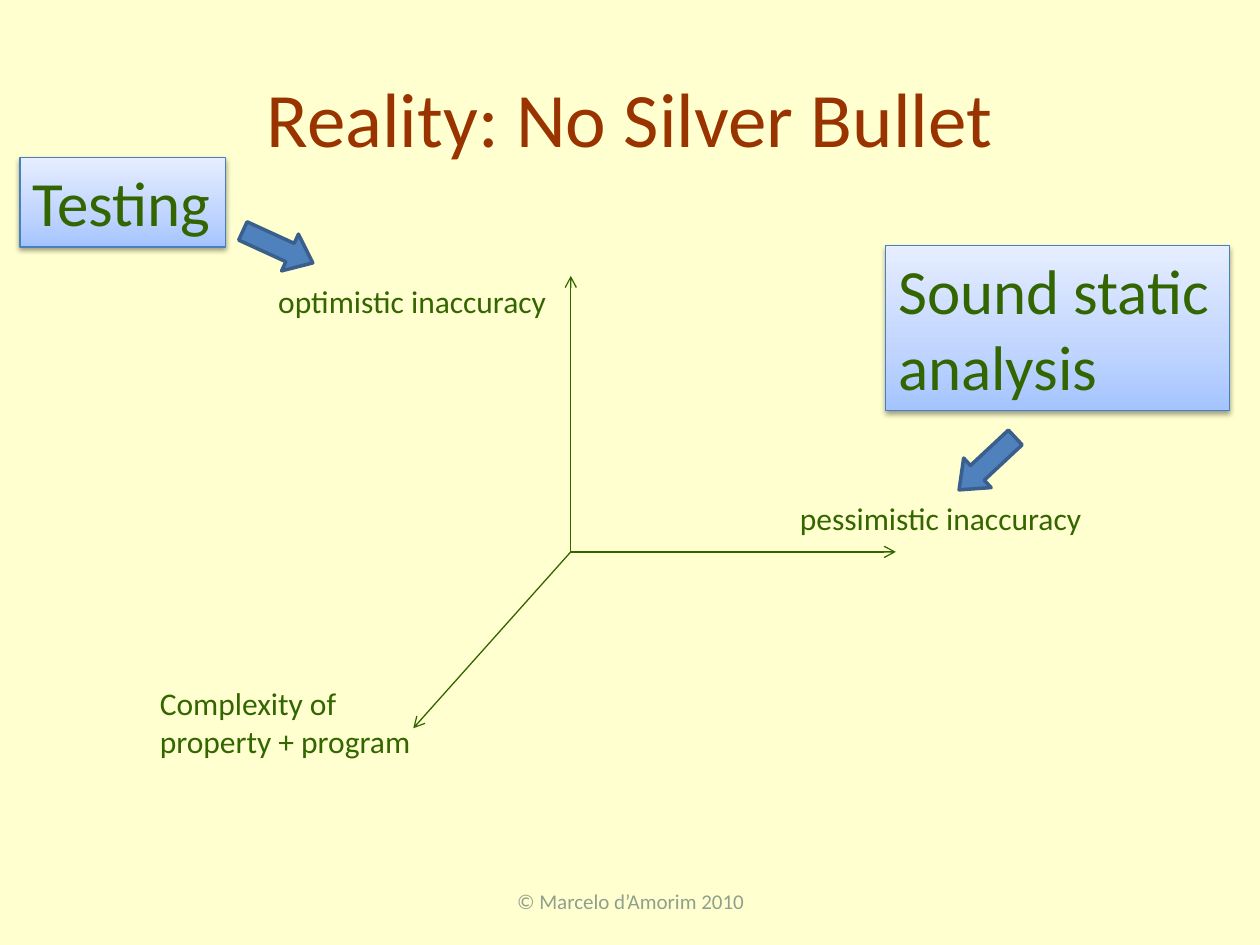
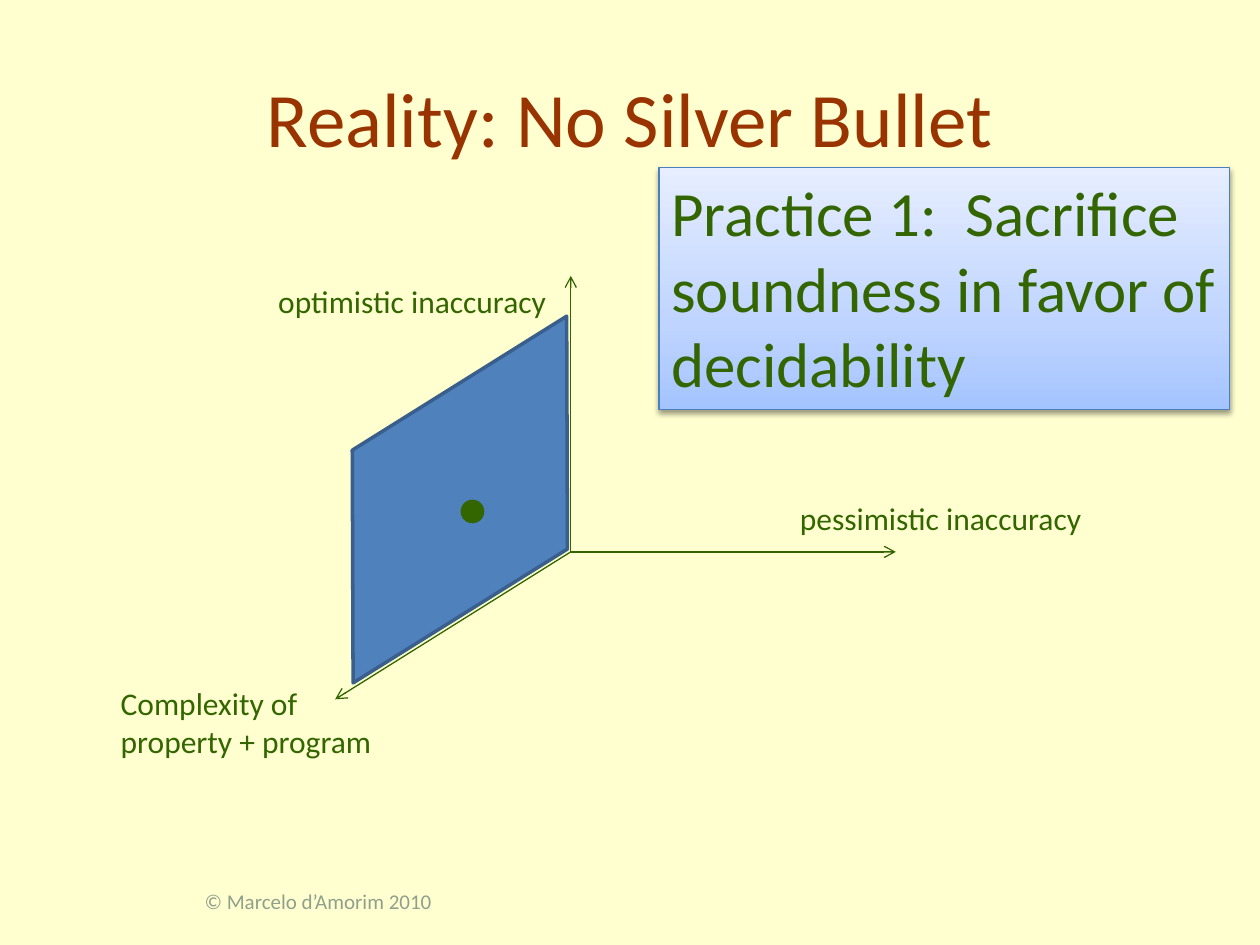
from copy import deepcopy
from dataclasses import dataclass

from pptx import Presentation
from pptx.dml.color import RGBColor as RGB
from pptx.enum.shapes import MSO_CONNECTOR as Connector, MSO_SHAPE as Preset
from pptx.enum.text import MSO_ANCHOR as Anchor, MSO_AUTO_SIZE as AutoSize, PP_ALIGN as Align
from pptx.oxml import parse_xml
from pptx.oxml.ns import nsdecls, qn
from pptx.util import Emu, Pt

EMU_PER_PX = 9144  # 100 px to the inch


@dataclass(frozen=True)
class Theme:
    font: str = "Calibri"
    background: RGB = RGB(0xFF, 0xFF, 0xD0)
    title: RGB = RGB(0x99, 0x33, 0x00)
    text: RGB = RGB(0x33, 0x66, 0x00)
    axis: RGB = RGB(0x32, 0x64, 0x00)
    footer: RGB = RGB(0x90, 0xA0, 0x8C)
    fill: RGB = RGB(0x4F, 0x81, 0xBD)
    outline: RGB = RGB(0x3A, 0x5F, 0x8C)
    callout_line: RGB = RGB(0x4B, 0x7E, 0xBC)
    callout_stops: tuple = (
        (0, RGB(0xA4, 0xC4, 0xFF)),
        (0.35, RGB(0xBF, 0xD4, 0xFF)),
        (1, RGB(0xE6, 0xEE, 0xFF)),
    )
    title_size: int = 44
    callout_size: int = 36
    label_size: int = 18
    footer_size: int = 12
    thin: float = 0.75
    thick: float = 2


THEME = Theme()
ORIGIN = (453, 438)


def px(*lengths):
    return [Emu(length * EMU_PER_PX) for length in lengths]


def style_text(frame, size, color, align=None):
    for paragraph in frame.paragraphs:
        paragraph.alignment = align
        font = paragraph.font
        font.name, font.size = THEME.font, Pt(size)
        font.color.rgb = color


def set_line(line, color, width):
    line.color.rgb = color
    line.width = Pt(width)


def add_label(slide, text, box, size=THEME.label_size, wrap=False):
    label = slide.shapes.add_textbox(*px(*box))
    frame = label.text_frame
    frame.text = text
    frame.word_wrap = wrap
    frame.auto_size = AutoSize.SHAPE_TO_FIT_TEXT
    style_text(frame, size, THEME.text)
    return label


def add_callout(slide, text, box, wrap=True):
    callout = add_label(slide, text, box, THEME.callout_size, wrap)
    set_line(callout.line, THEME.callout_line, THEME.thin)

    # Gradient rising from the bottom edge, with a third stop
    callout.fill.gradient()
    callout.fill.gradient_angle = 90
    properties = callout._element.spPr
    stop_list = properties.find(".//" + qn("a:gsLst"))
    stop_list.append(deepcopy(stop_list[0]))
    for stop, (position, color) in zip(callout.fill.gradient_stops, THEME.callout_stops):
        stop.position = position
        stop.color.rgb = color

    # Soft shadow below
    callout.shadow.inherit = False
    properties.find(qn("a:effectLst")).append(parse_xml(
        f'<a:outerShdw {nsdecls("a")} blurRad="40000" dist="20000" dir="5400000"'
        ' rotWithShape="0"><a:srgbClr val="000000"><a:alpha val="38000"/>'
        '</a:srgbClr></a:outerShdw>'))


def add_axis(slide, tip):
    axis = slide.shapes.add_connector(Connector.STRAIGHT, *px(*ORIGIN, *tip))
    set_line(axis.line, THEME.axis, THEME.thin)
    properties = axis._element.spPr
    properties.find(qn("a:ln")).append(parse_xml(f'<a:tailEnd {nsdecls("a")} type="arrow"/>'))
    properties.append(parse_xml(f'<a:effectLst {nsdecls("a")}/>'))


def add_solid(slide, preset, box, fill=THEME.fill, outline=THEME.outline,
              rotation=0, adjustments=()):
    solid = slide.shapes.add_shape(preset, *px(*box))
    solid.shadow.inherit = False
    solid.fill.solid()
    solid.fill.fore_color.rgb = fill
    set_line(solid.line, outline, THEME.thick)
    solid.rotation = rotation
    for index, value in enumerate(adjustments):
        solid.adjustments[index] = value


def add_pointer(slide, left, top, rotation):
    add_solid(slide, Preset.LEFT_ARROW, (left, top, 61, 32),
              rotation=rotation, adjustments=(0.5, 0.62))


def add_footer(slide, left):
    footer = slide.shapes.add_textbox(*px(left, 695, 317, 40))
    frame = footer.text_frame
    frame.text = "© Marcelo d’Amorim 2010"
    frame.word_wrap = True
    frame.vertical_anchor = Anchor.MIDDLE
    style_text(frame, THEME.footer_size, THEME.footer, Align.CENTER)


def add_reality_slide(deck, complexity_tip, complexity_left, footer_left):
    """Slide with the title, the three inaccuracy axes and the footer."""
    slide = deck.slides.add_slide(deck.slide_layouts.get_by_name("Title Only"))
    title = slide.shapes.title
    title.left, title.top, title.width, title.height = px(50, 30, 900, 125)
    title.text_frame.text = "Reality: No Silver Bullet"
    title.text_frame.vertical_anchor = Anchor.MIDDLE
    style_text(title.text_frame, THEME.title_size, THEME.title, Align.CENTER)

    for tip in ((453, 219), (711, 438), complexity_tip):
        add_axis(slide, tip)
    add_label(slide, "optimistic inaccuracy", (211, 219, 235, 40))
    add_label(slide, "pessimistic inaccuracy", (625, 391, 246, 40))
    add_label(slide, "Complexity of\nproperty + program", (complexity_left, 538, 221, 71))
    add_footer(slide, footer_left)
    return slide


def main():
    deck = Presentation()
    deck.slide_width, deck.slide_height = px(1000, 750)
    backdrop = deck.slide_master.background.fill
    backdrop.solid()
    backdrop.fore_color.rgb = THEME.background

    # Slide 1: where each technique is inaccurate
    techniques = add_reality_slide(deck, (328, 578), complexity_left=117, footer_left=342)
    add_callout(techniques, "Testing", (16, 125, 163, 71), wrap=False)
    add_callout(techniques, "Sound static analysis", (703, 195, 273, 131))
    add_pointer(techniques, 190, 180, rotation=204.6)
    add_pointer(techniques, 753, 352, rotation=317)

    # Slide 2: the plane left after giving up soundness
    practice = add_reality_slide(deck, (266, 555), complexity_left=86, footer_left=94)
    add_callout(practice, "Practice 1:  Sacrifice soundness in favor of decidability",
                (523, 133, 453, 192))
    add_solid(practice, Preset.PARALLELOGRAM, (216, 318, 298, 157),
              rotation=328, adjustments=(0.62,))
    add_solid(practice, Preset.OVAL, (367, 398, 16, 16), THEME.text, THEME.text)

    deck.save("out.pptx")


if __name__ == "__main__":
    main()
